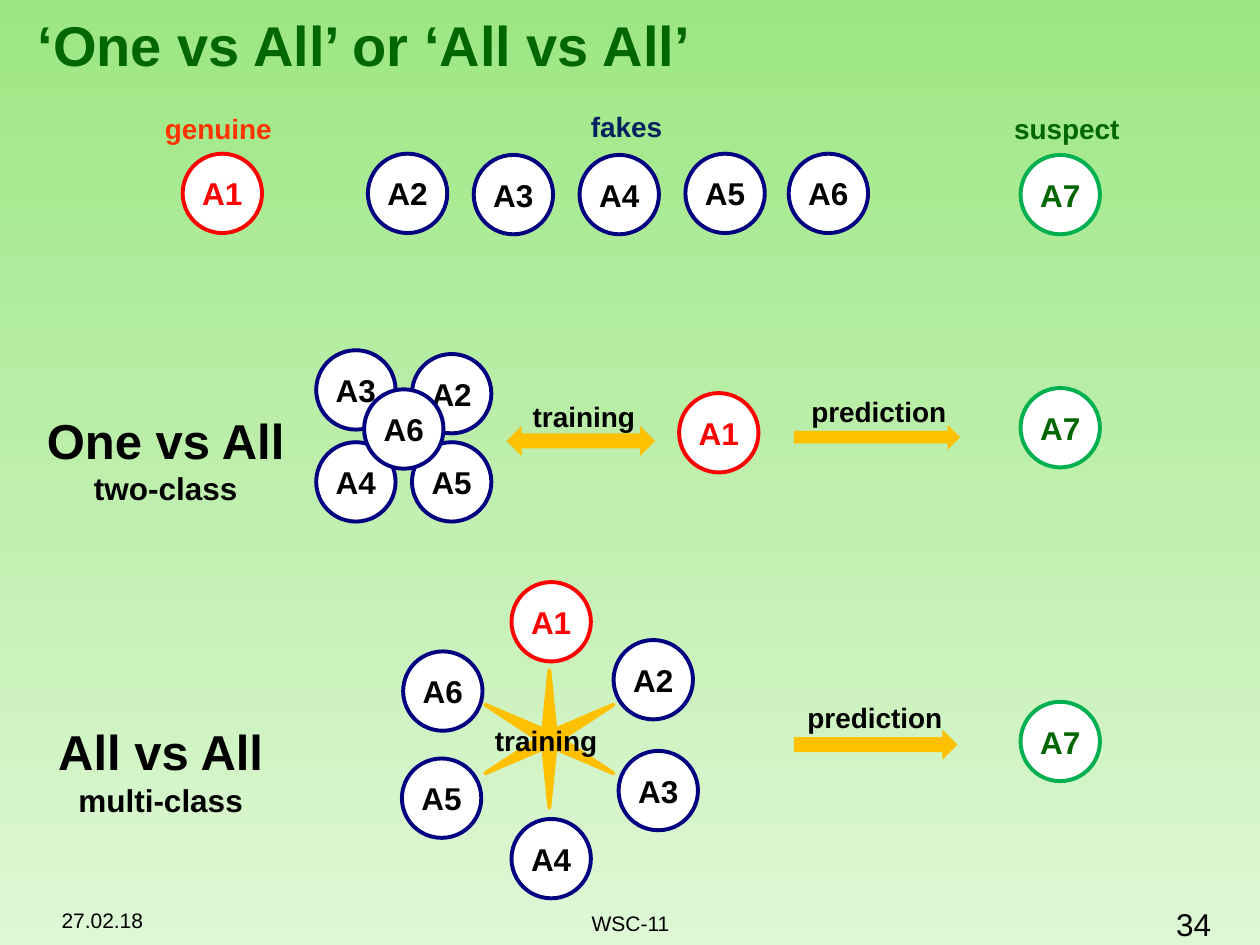
"""Build the slide comparing one-vs-all and all-vs-all classification."""
from pptx import Presentation
from pptx.dml.color import RGBColor
from pptx.enum.shapes import MSO_SHAPE
from pptx.enum.text import MSO_ANCHOR, PP_ALIGN
from pptx.util import Inches, Pt

OVAL, RIGHT, BOTH, STAR = (MSO_SHAPE.OVAL, MSO_SHAPE.RIGHT_ARROW,
                           MSO_SHAPE.LEFT_RIGHT_ARROW, MSO_SHAPE.STAR_6_POINT)
TOP, MIDDLE, BOTTOM = MSO_ANCHOR.TOP, MSO_ANCHOR.MIDDLE, MSO_ANCHOR.BOTTOM
LEFT, CENTER, END = PP_ALIGN.LEFT, PP_ALIGN.CENTER, PP_ALIGN.RIGHT

BLACK, WHITE, GOLD, DARK_GREEN = "000000", "FFFFFF", "FFC000", "006600"
GRADIENT = ("9DE783", "DEF7D5")
DIAMETER = 0.63
OUTLINE = 2.25
FAKE_COLOURS = ("000080", BLACK)
CIRCLE_COLOURS = {"A1": ("FF0000", "FF0000"), "A7": ("00B050", DARK_GREEN)}

STYLES = {
    "title": dict(align=LEFT, anchor=MIDDLE, wrap=True, bold=True, spacing=0.85),
    "label": dict(align=LEFT, anchor=TOP, wrap=False, bold=True),
    "heading": dict(align=CENTER, anchor=TOP, wrap=False, bold=True),
    "date": dict(align=LEFT, anchor=BOTTOM, wrap=True, bold=False),
    "number": dict(align=END, anchor=BOTTOM, wrap=True, bold=False),
    "footer": dict(align=CENTER, anchor=MIDDLE, wrap=True, bold=False),
    "circle": dict(align=CENTER, anchor=MIDDLE, wrap=False, bold=True, inset=0),
}

HEADER = {
    "circles": [("A2", 2.92, 1.22), ("A3", 3.76, 1.23), ("A4", 4.6, 1.23),
                ("A5", 5.44, 1.22), ("A6", 6.26, 1.22), ("A1", 1.45, 1.22),
                ("A7", 8.1, 1.23)],
    "arrows": [],
    "texts": [
        ("title", (0.2, 0.12, 9.69, 0.55), [("‘One vs All’ or ‘All vs All’", 32)], DARK_GREEN),
        ("date", (0.39, 7.2, 2.5, 0.25), [("27.02.18", 12)], BLACK),
        ("number", (8.5, 7.2, 1.21, 0.33), [("34", 18)], BLACK),
        ("footer", (3.42, 7.2, 3.17, 0.25), [("WSC-11", 12)], BLACK),
        ("label", (1.21, 0.84, 1.1, 0.37), [("genuine", 16)], "FF3300"),
        ("label", (4.59, 0.82, 0.79, 0.37), [("fakes", 16)], "002060"),
        ("label", (7.95, 0.84, 1.1, 0.37), [("suspect", 16)], DARK_GREEN),
    ],
}

GROUPS = [
    {
        "circles": [("A7", 8.1, 3.08)],
        "arrows": [(RIGHT, (6.3, 3.37, 1.32, 0.2))],
        "texts": [("label", (6.34, 3.08, 1.29, 0.37), [("prediction", 16)], BLACK)],
    },
    {
        "circles": [("A2", 3.27, 2.81), ("A3", 2.51, 2.78), ("A4", 2.51, 3.51),
                    ("A5", 3.27, 3.51), ("A1", 5.39, 3.12), ("A6", 2.89, 3.09)],
        "arrows": [(BOTH, (4.02, 3.38, 1.18, 0.24))],
        "texts": [
            ("heading", (0.26, 3.21, 2.11, 0.88), [("One vs All", 28), ("two-class", 18)], BLACK),
            ("label", (4.13, 3.12, 1.03, 0.37), [("training", 16)], BLACK),
        ],
    },
    {
        "circles": [("A7", 8.1, 5.57)],
        "arrows": [(RIGHT, (6.3, 5.79, 1.3, 0.24))],
        "texts": [("label", (6.31, 5.51, 1.29, 0.37), [("prediction", 16)], BLACK)],
    },
    {
        "circles": [("A6", 3.2, 5.17), ("A2", 4.87, 5.08), ("A3", 4.91, 5.96),
                    ("A4", 4.06, 6.5), ("A5", 3.19, 6.02), ("A1", 4.06, 4.62)],
        "arrows": [(STAR, (3.85, 5.32, 1.02, 1.09))],
        "texts": [
            ("heading", (0.35, 5.68, 1.85, 0.88), [("All vs All", 28), ("multi-class", 18)], BLACK),
            ("label", (3.83, 5.69, 1.03, 0.37), [("training", 16)], BLACK),
        ],
    },
]


def colour(value):
    return RGBColor.from_string(value)


def write(box, lines, text_colour, align, anchor, wrap, bold, spacing=None, inset=None):
    frame = box.text_frame
    frame.word_wrap, frame.vertical_anchor = wrap, anchor
    if inset is not None:
        for side in ("left", "top", "right", "bottom"):
            setattr(frame, f"margin_{side}", Inches(inset))
    para = frame.paragraphs[0]
    para.alignment, para.line_spacing = align, spacing
    for index, (text, size) in enumerate(lines):
        if index:
            para.add_line_break()
        span = para.add_run()
        span.text = text
        for name, value in dict(name="Arial", size=Pt(size), bold=bold).items():
            setattr(span.font, name, value)
        span.font.color.rgb = colour(text_colour)


def add_shape(shapes, kind, place, fill, line=None):
    shape = shapes.add_shape(kind, *map(Inches, place))
    shape.shadow.inherit = False
    shape.fill.solid()
    shape.fill.fore_color.rgb = colour(fill)
    if line:
        shape.line.color.rgb = colour(line)
        shape.line.width = Pt(OUTLINE)
    else:
        shape.line.fill.background()
    return shape


def draw(shapes, content):
    for name, left, top in content["circles"]:
        edge, text_colour = CIRCLE_COLOURS.get(name, FAKE_COLOURS)
        circle = add_shape(shapes, OVAL, (left, top, DIAMETER, DIAMETER), WHITE, edge)
        write(circle, [(name, 18)], text_colour, **STYLES["circle"])
    for kind, place in content["arrows"]:
        arrow = add_shape(shapes, kind, place, GOLD, GOLD if kind == STAR else None)
        if kind == STAR:
            arrow.adjustments[0] = 0.08
    for style, place, lines, text_colour in content["texts"]:
        box = shapes.add_textbox(*map(Inches, place))
        write(box, lines, text_colour, **STYLES[style])


def main():
    deck = Presentation()
    deck.slide_width, deck.slide_height = Inches(10), Inches(7.5)
    page = deck.slides.add_slide(deck.slide_layouts[6])
    backdrop = page.background.fill
    backdrop.gradient()
    backdrop.gradient_angle = 270
    for stop, value in zip(backdrop.gradient_stops, GRADIENT):
        stop.color.rgb = colour(value)
    draw(page.shapes, HEADER)
    for content in GROUPS:
        draw(page.shapes.add_group_shape().shapes, content)
    deck.save("out.pptx")


if __name__ == "__main__":
    main()
